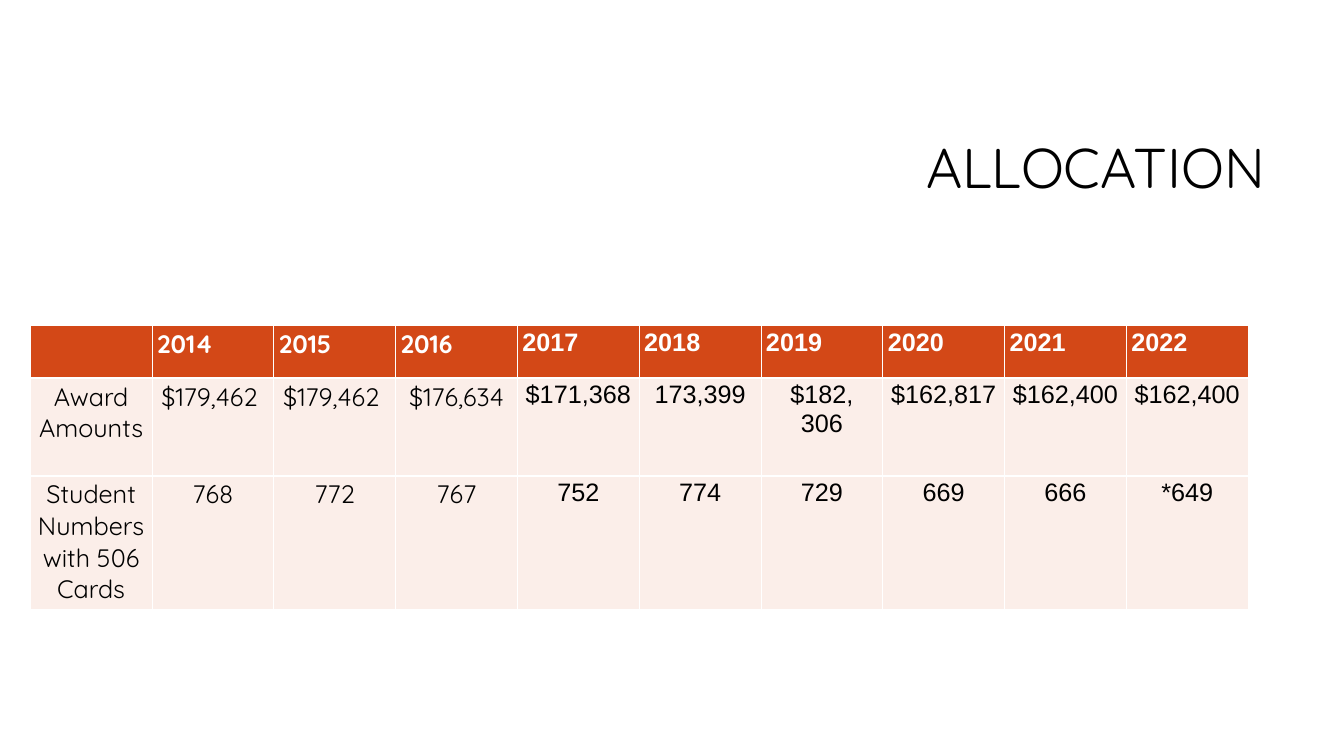
from dataclasses import dataclass

from pptx import Presentation
from pptx.dml.color import RGBColor
from pptx.enum.text import MSO_ANCHOR, PP_ALIGN
from pptx.oxml import parse_xml
from pptx.oxml.ns import nsdecls
from pptx.util import Emu, Inches, Pt

COLORS = {"text": "000000", "white": "FFFFFF", "header": "D34817", "band": "FBEEE9"}
BRAND_FONT, PLAIN_FONT = "Quicksand", "Arial"
FIRST_PLAIN_COLUMN = 4  # from 2017 on
THIN, THICK = 0.75, 1.5


@dataclass
class Row:
    cells: list[str]
    height: float  # percent of slide height
    fill: str
    ink: str
    bold: bool
    align: PP_ALIGN
    top: float  # border widths in points
    bottom: float


ROWS = [
    Row(["", *(str(year) for year in range(2014, 2023))],
        6.93, "header", "white", True, PP_ALIGN.LEFT, THIN, THICK),
    Row(["Award\nAmounts", "$179,462 ", "$179,462 ", "$176,634", "$171,368",
         "173,399", "$182, 306", "$162,817", "$162,400", "$162,400"],
        12.93, "band", "text", False, PP_ALIGN.CENTER, THICK, THICK),
    Row(["Student\nNumbers \nwith 506 Cards", "768", "772", "767", "752",
         "774", "729", "669", "666", "*649"],
        17.73, "band", "text", False, PP_ALIGN.CENTER, THICK, THIN),
]

deck = Presentation()
deck.slide_width, deck.slide_height = Inches(13.33), Inches(7.5)


def across(percent: float) -> Emu:
    return Emu(round(deck.slide_width * percent / 100))


def down(percent: float) -> Emu:
    return Emu(round(deck.slide_height * percent / 100))


def style_paragraph(paragraph, align: PP_ALIGN, font_name: str, size: float,
                    ink: str, bold: bool = False) -> None:
    paragraph.alignment = align
    for run in paragraph.runs:
        run.font.name = font_name
        run.font.size = Pt(size)
        run.font.bold = bold
        run.font.color.rgb = RGBColor.from_string(COLORS[ink])


def add_borders(cell, top: float, bottom: float) -> None:
    properties = cell._tc.get_or_add_tcPr()
    for side, width in (("L", THIN), ("R", THIN), ("T", top), ("B", bottom)):
        properties.append(parse_xml(
            f'<a:ln{side} {nsdecls("a")} w="{Pt(width)}"><a:solidFill>'
            f'<a:srgbClr val="{COLORS["white"]}"/></a:solidFill></a:ln{side}>'))


def draw_cell(cell, wording: str, row: Row, font_name: str) -> None:
    cell.margin_left = cell.margin_right = Inches(0.05)
    cell.margin_top = cell.margin_bottom = Inches(0.03)
    add_borders(cell, row.top, row.bottom)
    cell.fill.solid()
    cell.fill.fore_color.rgb = RGBColor.from_string(COLORS[row.fill])
    cell.text_frame.text = wording
    for paragraph in cell.text_frame.paragraphs:
        style_paragraph(paragraph, row.align, font_name, 18, row.ink, row.bold)


def draw_heading(slide) -> None:
    heading = slide.shapes.title
    heading.left, heading.top = across(24.23), down(13.2)
    heading.width, heading.height = across(70.67), down(18.8)
    frame = heading.text_frame
    frame.text = "ALLOCATION"
    frame.vertical_anchor = MSO_ANCHOR.MIDDLE
    frame.paragraphs[0].line_spacing = 0.9
    style_paragraph(frame.paragraphs[0], PP_ALIGN.RIGHT, BRAND_FONT, 40, "text")


def draw_awards(slide) -> None:
    awards = slide.shapes.add_table(
        len(ROWS), len(ROWS[0].cells), across(2.25), down(43.07),
        across(90.62), down(sum(row.height for row in ROWS))).table
    for row_index, row in enumerate(ROWS):
        awards.rows[row_index].height = down(row.height)
        for column, wording in enumerate(row.cells):
            font_name = BRAND_FONT if column < FIRST_PLAIN_COLUMN else PLAIN_FONT
            draw_cell(awards.cell(row_index, column), wording, row, font_name)


def main() -> None:
    slide = deck.slides.add_slide(deck.slide_layouts[5])
    # Heading
    draw_heading(slide)
    # Awards and student numbers by year
    draw_awards(slide)
    deck.save("out.pptx")


if __name__ == "__main__":
    main()
